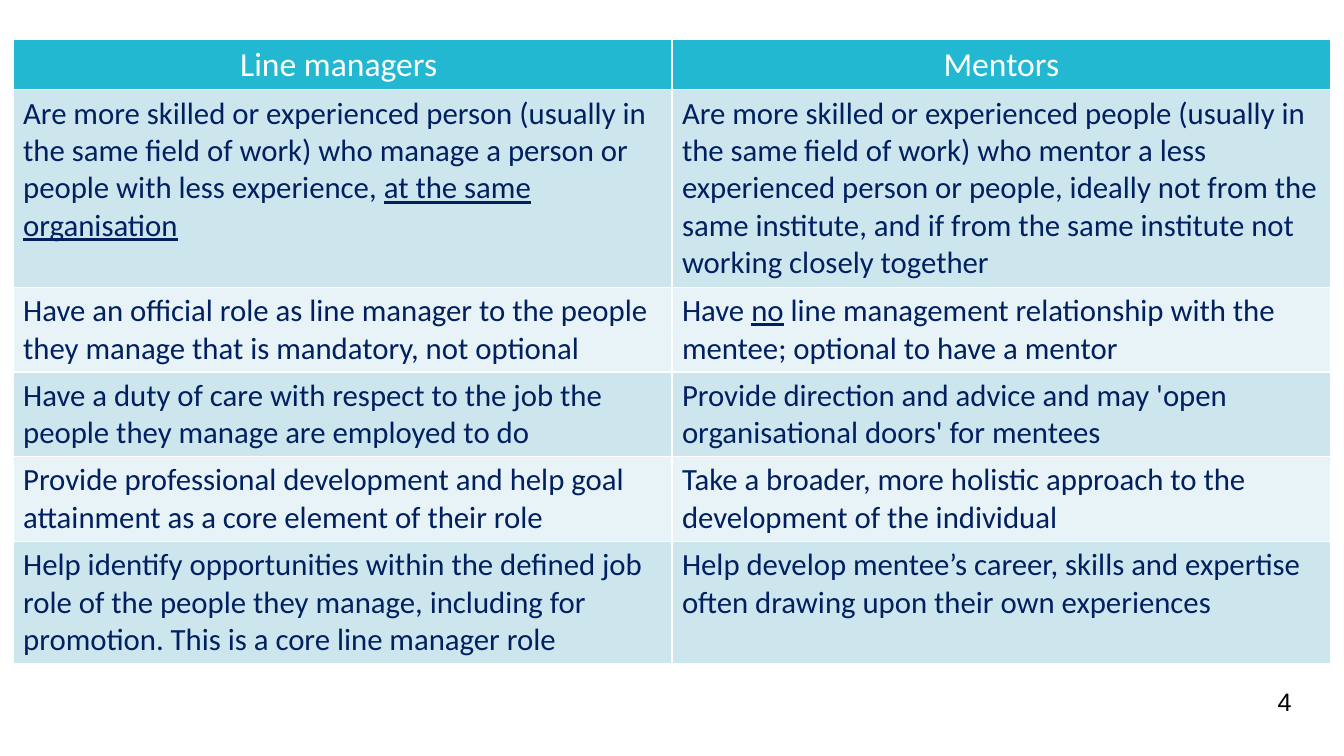
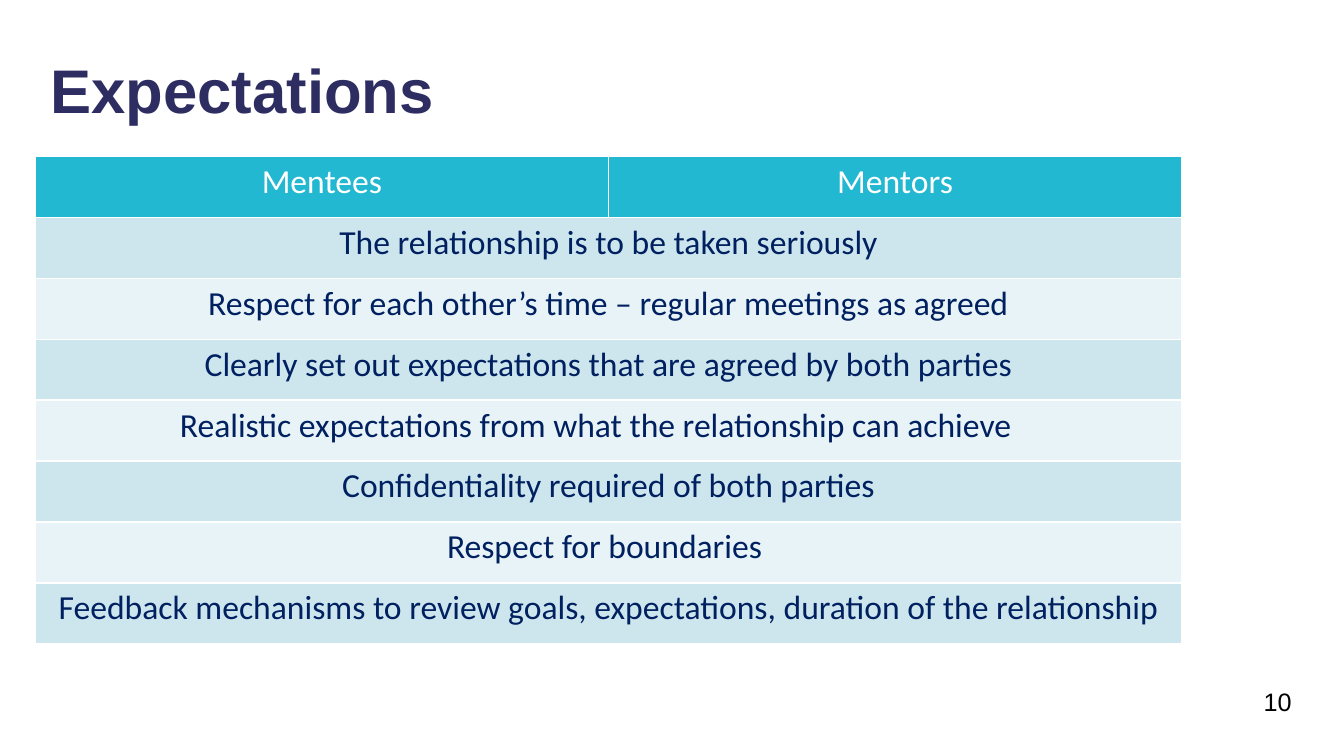
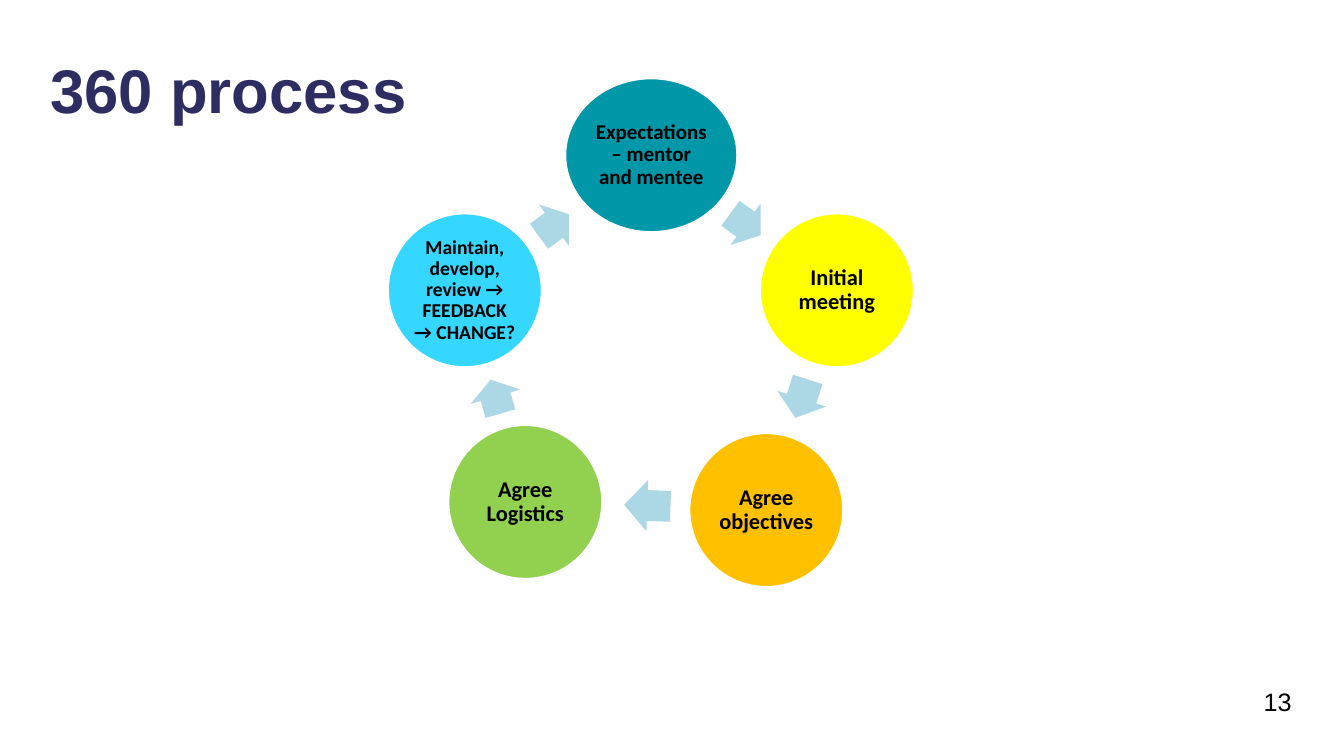
from lxml import etree
from pptx import Presentation
from pptx.dml.color import RGBColor
from pptx.enum import shapes, text
from pptx.oxml.ns import qn
from pptx.util import Inches, Pt

HUES = {
    "white": "FFFFFF", "black": "000000", "title": "2E2D62", "navy": "002060",
    "head": "22B8D1", "dark": "CDE6EE", "light": "E8F3F7", "arrow": "ACD8E5",
    "teal": "0097A9", "yellow": "FFFF00", "orange": "FFC000",
    "green": "92D050", "sky": "35D6FF",
}
LEFT, MID, RIGHT = text.PP_ALIGN.LEFT, text.PP_ALIGN.CENTER, text.PP_ALIGN.RIGHT
CENTRE = text.MSO_ANCHOR.MIDDLE


def hue(name):
    return RGBColor.from_string(HUES[name])


def write(frame, words, size=18, color="black", font="Arial", bold=False,
          align=LEFT, space=None, anchor=None):
    frame.word_wrap = True
    if anchor is not None:
        frame.vertical_anchor = anchor
    for i, line in enumerate(words.split("\n")):
        para = frame.add_paragraph() if i else frame.paragraphs[0]
        para.alignment = align
        if space:
            para.line_spacing = space
        for j, part in enumerate(line.split("_")):
            run = para.add_run()
            run.text = part
            run.font.size = Pt(size)
            run.font.name = font
            run.font.bold = bold
            run.font.underline = j % 2 == 1
            run.font.color.rgb = hue(color)


def start(deck, number, title=None):
    slide = deck.slides.add_slide(deck.slide_layouts[5 if title else 6])
    if title:
        head = slide.shapes.title
        head.left, head.top = Inches(0.4), Inches(0.4)
        head.width, head.height = Inches(12.51), Inches(1.05)
        head.text_frame.auto_size = text.MSO_AUTO_SIZE.NONE
        write(head.text_frame, title, size=44, color="title", bold=True,
              space=0.9, anchor=CENTRE)
    box = slide.shapes.add_textbox(Inches(9.91), Inches(6.76), Inches(3), Inches(0.4))
    write(box.text_frame, str(number), align=RIGHT, anchor=CENTRE)
    return slide


def edge(cell):
    props = cell._tc.get_or_add_tcPr()
    for side in ("a:lnL", "a:lnR", "a:lnT", "a:lnB"):
        line = etree.SubElement(props, qn(side), w=str(Pt(1)))
        fill = etree.SubElement(line, qn("a:solidFill"))
        etree.SubElement(fill, qn("a:srgbClr"), val=HUES["white"])


def grid(slide, left, top, wide, highs, rows, size, align):
    cols = len(rows[0])
    table = slide.shapes.add_table(len(rows), cols, Inches(left), Inches(top),
                                   Inches(wide), Inches(sum(highs))).table
    for i, (high, row) in enumerate(zip(highs, rows)):
        table.rows[i].height = Inches(high)
        fill = "head" if i == 0 else "dark" if i % 2 else "light"
        for cell in table.rows[i].cells:
            edge(cell)
            cell.fill.solid()
            cell.fill.fore_color.rgb = hue(fill)
        if len(row) < cols:
            table.cell(i, 0).merge(table.cell(i, cols - 1))
        for j, words in enumerate(row):
            write(table.cell(i, j).text_frame, words, font="Calibri",
                  size=size if i else 24, color="navy" if i else "white",
                  align=align if i else MID)


def shape(slide, kind, left, top, wide, high, fill):
    item = slide.shapes.add_shape(kind, Inches(left), Inches(top),
                                  Inches(wide), Inches(high))
    item.shadow.inherit = False
    item.fill.solid()
    item.fill.fore_color.rgb = hue(fill)
    item.line.fill.background()
    return item


def disc(slide, left, top, wide, fill, words, size):
    item = shape(slide, shapes.MSO_SHAPE.OVAL, left, top, wide, 1.52, fill)
    item.line.color.rgb = hue("white")
    item.line.width = Pt(1)
    frame = item.text_frame
    frame.margin_left = frame.margin_right = Inches(0.02)
    frame.margin_top = frame.margin_bottom = Inches(0.02)
    write(frame, words, size=size, font="Calibri", bold=True, align=MID,
          space=0.9, anchor=CENTRE)


def arrow(slide, left, top, wide, turn):
    item = shape(slide, shapes.MSO_SHAPE.RIGHT_ARROW, left, top, wide, 0.51, "arrow")
    item.adjustments[0], item.adjustments[1] = 0.6, 0.5
    item.rotation = turn


def roles(deck):
    rows = [
        ("Line managers ", "Mentors"),
        ("Are more skilled or experienced person (usually in the same field of work) "
         "who manage a person or people with less experience, "
         "_at the same organisation_",
         "Are more skilled or experienced people (usually in the same field of work) "
         "who mentor a less experienced person or people, ideally not from the same "
         "institute, and if from the same institute not working closely together"),
        ("Have an official role as line manager to the people they manage that is "
         "mandatory, not optional",
         "Have _no_ line management relationship with the mentee; "
         "optional to have a mentor"),
        ("Have a duty of care with respect to the job the people they manage are "
         "employed to do",
         "Provide direction and advice and may 'open organisational doors' for mentees"),
        ("Provide professional development and help goal attainment as a core element "
         "of their role",
         "Take a broader, more holistic approach to the development of the individual"),
        ("Help identify opportunities within the defined job role of the people they "
         "manage, including for promotion. This is a core line manager role",
         "Help develop mentee’s career, skills and expertise often drawing upon their "
         "own experiences"),
    ]
    highs = [0.5, 1.96, 0.84, 0.84, 0.84, 1.21]
    grid(start(deck, 4), 0.13, 0.39, 13.07, highs, rows, 22, LEFT)


def hopes(deck):
    rows = [
        ("Mentees", "Mentors"),
        ("The relationship is to be taken seriously",),
        ("Respect for each other’s time – regular meetings as agreed",),
        ("Clearly set out expectations that are agreed by both parties",),
        ("Realistic expectations from what the relationship can achieve\t",),
        ("Confidentiality required of both parties",),
        ("Respect for boundaries ",),
        ("Feedback mechanisms to review goals, expectations, duration of the "
         "relationship",),
    ]
    slide = start(deck, 10, "Expectations")
    grid(slide, 0.35, 1.55, 11.37, [4.84 / len(rows)] * len(rows), rows, 24, MID)


def cycle(deck):
    slide = start(deck, 13, "360 process")
    for spot in (
        (5.61, 0.78, 1.7, "teal", "Expectations – mentor and mentee", 15),
        (7.54, 2.12, 1.52, "yellow", "Initial meeting", 16),
        (6.84, 4.3, 1.52, "orange", "Agree\nobjectives", 16),
        (4.45, 4.22, 1.52, "green", "Agree Logistics", 16),
        (3.85, 2.12, 1.52, "sky", "Maintain, develop, review → FEEDBACK → CHANGE?", 14),
    ):
        disc(slide, *spot)
    for spot in (
        (7.21, 1.97, 0.37, 36),
        (7.75, 3.7, 0.4, 108),
        (6.19, 4.76, 0.46, 182),
        (4.74, 3.68, 0.35, 253.9),
        (5.31, 1.98, 0.37, 324),
    ):
        arrow(slide, *spot)


def main():
    deck = Presentation()
    deck.slide_width, deck.slide_height = Inches(13.33), Inches(7.5)
    roles(deck)
    hopes(deck)
    cycle(deck)
    deck.save("out.pptx")


if __name__ == "__main__":
    main()
